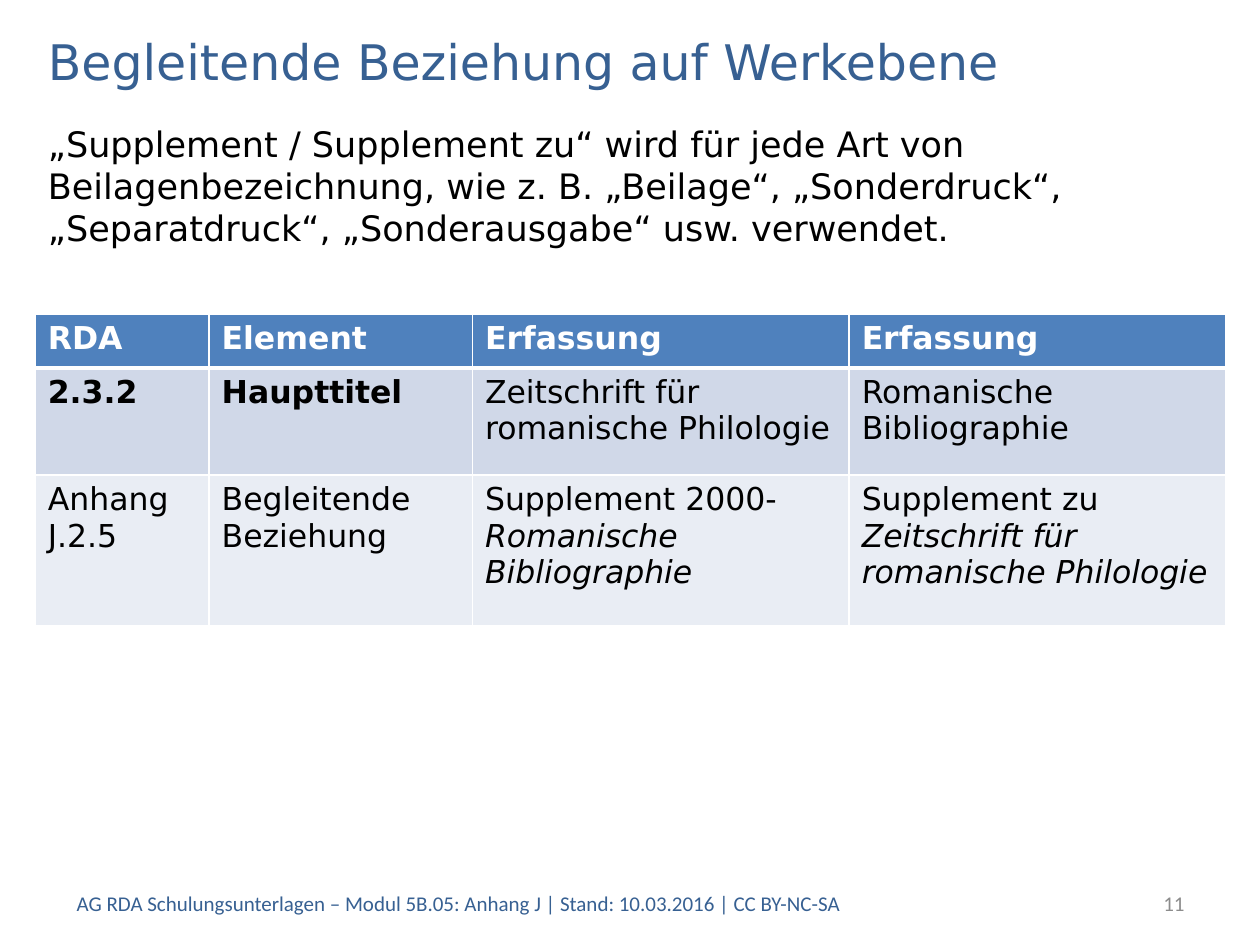
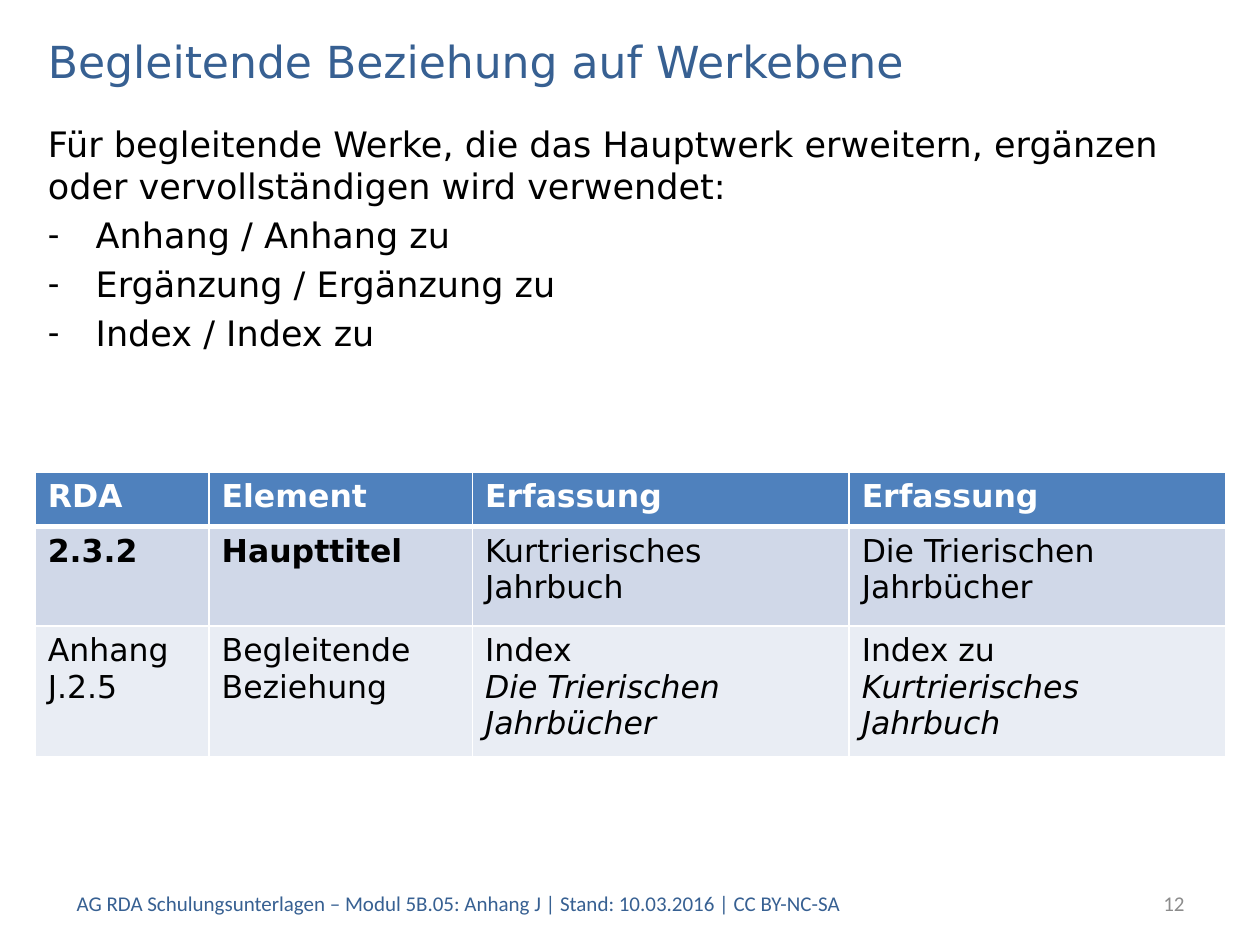
import dataclasses

import pptx
import pptx.dml.color
import pptx.enum.text
import pptx.oxml.ns
import pptx.util
from lxml import etree

ALIGN = pptx.enum.text.PP_ALIGN
ANCHOR = pptx.enum.text.MSO_ANCHOR


@dataclasses.dataclass(frozen=True)
class Theme:
    # Colours
    accent: str = "376092"
    ink: str = "000000"
    muted: str = "8C8C8C"
    paper: str = "FFFFFF"
    header: str = "4F81BD"
    bands: tuple = ("D0D8E8", "E9EDF4")
    # Fonts and sizes in points
    font: str = "DejaVu Sans"
    footer_font: str = "Calibri"
    title: float = 28
    body: float = 20
    cell: float = 18
    footer: float = 12
    # Shared places on the grid
    left: float = 2.8
    width: float = 94.5
    columns: tuple = (13.8, 20.9, 29.9, 29.9)


FOOTER = "AG RDA Schulungsunterlagen – Modul 5B.05: Anhang J | Stand: 10.03.2016 | CC BY-NC-SA"
FIRST_PAGE = 11
GRID_COLUMNS, GRID_ROWS = 100, 75


def sub(parent, tag, **attrs):
    """Append a drawing element with the given attributes."""
    el = etree.SubElement(parent, pptx.oxml.ns.qn(tag))
    for name, value in attrs.items():
        el.set(name, str(value))
    return el


def write(p, text, font, size, color, bold=False, italic=False, align=None):
    """Add formatted text to a paragraph; a newline becomes a line break."""
    if align is not None:
        p.alignment = align
    for i, line in enumerate(text.split("\n")):
        if i:
            p.add_line_break()
        if line:
            r = p.add_run()
            r.text = line
            r.font.name, r.font.size = font, pptx.util.Pt(size)
            r.font.bold, r.font.italic = bold, italic
            r.font.color.rgb = pptx.dml.color.RGBColor.from_string(color)


class Deck:
    def __init__(self, theme):
        self.theme = theme
        self.prs = pptx.Presentation()
        self.prs.slide_width = pptx.util.Inches(10)
        self.prs.slide_height = pptx.util.Inches(7.5)
        self.s = None

    def x(self, columns):
        return round(self.prs.slide_width * columns / GRID_COLUMNS)

    def y(self, rows):
        return round(self.prs.slide_height * rows / GRID_ROWS)

    def place(self, sp, left, top, width, height, anchor):
        sp.left, sp.top = self.x(left), self.y(top)
        sp.width, sp.height = self.x(width), self.y(height)
        tf = sp.text_frame
        tf.word_wrap = True
        tf.auto_size = pptx.enum.text.MSO_AUTO_SIZE.NONE
        tf.vertical_anchor = anchor
        return tf

    def slide(self, title, title_size=None):
        t = self.theme
        self.s = self.prs.slides.add_slide(self.prs.slide_layouts[1])
        tf = self.place(self.s.shapes.title, t.left, 2, t.width, 5.6, ANCHOR.MIDDLE)
        write(tf.paragraphs[0], title, t.font, title_size or t.title, t.accent,
              align=ALIGN.LEFT)
        page = FIRST_PAGE + len(self.prs.slides) - 1
        self.label(FOOTER, 5.1, 66.9, t.accent, ALIGN.LEFT)
        self.label(str(page), 79.1, 15.9, t.muted, ALIGN.RIGHT)

    def label(self, text, left, width, color, align):
        """One text in the footer line."""
        t = self.theme
        sp = self.s.shapes.add_textbox(0, 0, 0, 0)
        tf = self.place(sp, left, 69.7, width, 4, ANCHOR.MIDDLE)
        write(tf.paragraphs[0], text, t.footer_font, t.footer, color, align=align)

    def body(self, intro, items=()):
        """An opening paragraph, then a dashed list."""
        t = self.theme
        tf = self.place(self.s.placeholders[1], t.left, 9.2, t.width, 59.8, ANCHOR.TOP)
        for i, text in enumerate((intro, *items)):
            p = tf.add_paragraph() if i else tf.paragraphs[0]
            p.space_before = pptx.util.Pt(t.body * 0.2)
            indent = self.x(3.8) if i else 0
            ppr = p._p.get_or_add_pPr()
            ppr.set("marL", str(indent))
            ppr.set("indent", str(-indent))
            if i:
                sub(ppr, "a:buChar", char="-")
            else:
                sub(ppr, "a:buNone")
            write(p, text, t.font, t.body, t.ink)

    def table(self, top, heights, rows):
        t = self.theme
        table = self.s.shapes.add_table(
            len(rows), len(t.columns), self.x(t.left), self.y(top),
            self.x(t.width), self.y(sum(heights))).table
        for column, width in zip(table.columns, t.columns):
            column.width = self.x(width)
        for i, (height, row) in enumerate(zip(heights, rows)):
            table.rows[i].height = self.y(height)
            for j, content in enumerate(row):
                self.cell(table.cell(i, j), content, i, bold=i == 0 or (i == 1 and j < 2))

    def cell(self, cell, content, row, bold):
        """Content is plain text, or a pair of plain and italic text."""
        t = self.theme
        tcpr = cell._tc.get_or_add_tcPr()
        for side in "LRTB":
            thick = (row == 0 and side == "B") or (row == 1 and side == "T")
            ln = sub(tcpr, f"a:ln{side}", w=pptx.util.Pt(3 if thick else 1))
            sub(sub(ln, "a:solidFill"), "a:srgbClr", val=t.paper)
        cell.fill.solid()
        fill = t.bands[(row - 1) % 2] if row else t.header
        cell.fill.fore_color.rgb = pptx.dml.color.RGBColor.from_string(fill)
        parts = (content,) if isinstance(content, str) else content
        for k, text in enumerate(parts):
            write(cell.text_frame.paragraphs[0], text, t.font, t.cell,
                  t.ink if row else t.paper, bold=bold, italic=k == 1)


def relation_rows(main, companion, relation, inverse):
    """Rows for a work and its companion, each pointing to the other."""
    return [
        ("RDA", "Element", "Erfassung", "Erfassung"),
        ("2.3.2", "Haupttitel", main, companion),
        ("Anhang\nJ.2.5", "Begleitende Beziehung",
         (relation + "\n", companion), (inverse + "\n", main)),
    ]


def main():
    deck = Deck(Theme())
    title = "Begleitende Beziehung auf Werkebene"

    # Supplements
    deck.slide(title)
    deck.body("„Supplement / Supplement zu“ wird für jede Art von Beilagenbezeichnung, "
              "wie z. B. „Beilage“, „Sonderdruck“, „Separatdruck“, „Sonderausgabe“ "
              "usw. verwendet.")
    deck.table(24.9, (4.3, 8.5, 12), relation_rows(
        "Zeitschrift für romanische Philologie", "Romanische Bibliographie",
        "Supplement 2000-", "Supplement zu"))

    # Works that extend the main work
    deck.slide(title, title_size=25.2)
    deck.body("Für begleitende Werke, die das Hauptwerk erweitern, ergänzen oder "
              "vervollständigen wird verwendet:",
              [f"{name} / {name} zu" for name in ("Anhang", "Ergänzung", "Index")])
    deck.table(37.5, (4.3, 7.9, 10.4), relation_rows(
        "Kurtrierisches Jahrbuch", "Die Trierischen Jahrbücher", "Index", "Index zu"))

    deck.prs.save("out.pptx")


if __name__ == "__main__":
    main()
